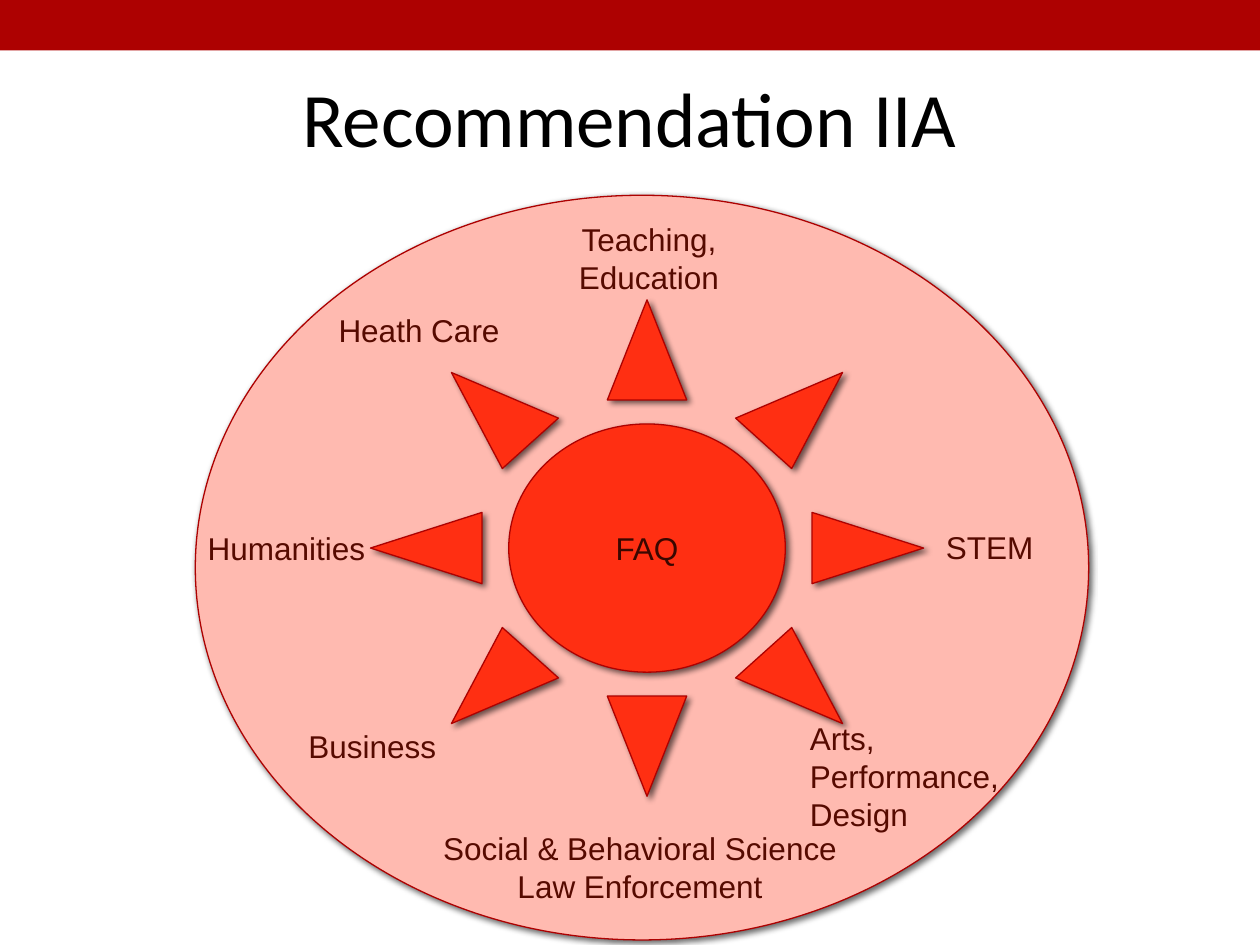
from typing import NamedTuple

from pptx import Presentation
from pptx.dml.color import RGBColor
from pptx.enum.shapes import MSO_SHAPE as SHAPE
from pptx.enum.text import MSO_ANCHOR as ANCHOR, MSO_AUTO_SIZE as AUTO_SIZE, PP_ALIGN as ALIGN
from pptx.oxml import parse_xml
from pptx.oxml.ns import nsdecls
from pptx.util import Inches, Pt

DARK_RED = RGBColor(0xAD, 0x01, 0x01)
PINK = RGBColor(0xFF, 0xBA, 0xB0)
BRIGHT_RED = RGBColor(0xFF, 0x2F, 0x12)
LABEL_BROWN = RGBColor(0x56, 0x0A, 0x00)
CORE_BROWN = RGBColor(0x3A, 0x07, 0x00)
BLACK = RGBColor(0, 0, 0)

SLIDE_W, SLIDE_H = 10, 7.5
LINE_H, INSETS_H = 0.305, 0.1


class Box(NamedTuple):
    """Left, top, width and height in inches."""
    left: float
    top: float
    width: float
    height: float

    def emu(self) -> list:
        return [Inches(v) for v in self]


class Label(NamedTuple):
    text: str
    left: float
    top: float
    width: float
    lines: int = 1
    align: ALIGN = ALIGN.LEFT
    wrap: bool = False


FIELD = Box(1.55, 1.55, 7.09, 5.91)
SUN = Box(2.94, 2.38, 4.39, 3.94)
LABELS = [
    Label("Teaching,\nEducation", 4.49, 1.7, 1.32, 2, ALIGN.CENTER),
    Label("Social & Behavioral Science\nLaw Enforcement", 3.4, 6.53, 3.36, 2, ALIGN.CENTER),
    Label("Business", 2.35, 5.72, 1.23),
    Label("STEM", 7.41, 4.14, 0.9),
    Label("Arts, Performance, Design", 6.33, 5.66, 1.75, 3, wrap=True),
    Label("Humanities", 1.55, 4.15, 1.46),
]


def set_text(tf, text: str, size: float, color: RGBColor, align: ALIGN, font: str = "Arial") -> None:
    tf.text = text
    for p in tf.paragraphs:
        p.alignment = align
        for r in p.runs:
            r.font.name = font
            r.font.size = Pt(size)
            r.font.color.rgb = color


def add_filled(s, kind: SHAPE, box: Box, fill: RGBColor):
    sp = s.shapes.add_shape(kind, *box.emu())
    sp.fill.solid()
    sp.fill.fore_color.rgb = fill
    sp.line.fill.background()
    sp.shadow.inherit = False
    return sp


def add_raised(s, kind: SHAPE, box: Box, fill: RGBColor):
    """Add a filled shape with a thin outline and a soft shadow."""
    sp = add_filled(s, kind, box, fill)
    sp.line.color.rgb = DARK_RED
    sp.line.width = Pt(0.75)
    effects = sp._element.spPr.find("{*}effectLst")
    effects.append(parse_xml(
        f'<a:outerShdw {nsdecls("a")} blurRad="{Pt(3)}" dist="{Pt(2)}" dir="2700000" rotWithShape="0">'
        '<a:srgbClr val="000000"><a:alpha val="60000"/></a:srgbClr></a:outerShdw>'))
    return sp


def add_label(s, label: Label) -> None:
    box = Box(label.left, label.top, label.width, label.lines * LINE_H + INSETS_H)
    tf = s.shapes.add_textbox(*box.emu()).text_frame
    set_text(tf, label.text, 18, LABEL_BROWN, label.align)
    tf.word_wrap = label.wrap
    tf.auto_size = AUTO_SIZE.SHAPE_TO_FIT_TEXT


def main() -> None:
    prs = Presentation()
    prs.slide_width, prs.slide_height = Inches(SLIDE_W), Inches(SLIDE_H)
    s = prs.slides.add_slide(prs.slide_layouts[5])

    title = s.shapes.title
    title.left, title.top, title.width, title.height = Box(0.5, 0.3, 9, 1.25).emu()
    title.text_frame.vertical_anchor = ANCHOR.MIDDLE
    set_text(title.text_frame, "Recommendation IIA", 44, BLACK, ALIGN.CENTER, "Calibri")

    add_filled(s, SHAPE.RECTANGLE, Box(0, 0, SLIDE_W, 0.4), DARK_RED)

    field = add_raised(s, SHAPE.OVAL, FIELD, PINK)
    field.text_frame.vertical_anchor = ANCHOR.TOP
    set_text(field.text_frame, "Heath Care", 18, LABEL_BROWN, ALIGN.LEFT)

    sun = add_raised(s, SHAPE.SUN, SUN, BRIGHT_RED)
    sun.text_frame.vertical_anchor = ANCHOR.MIDDLE
    set_text(sun.text_frame, "FAQ", 18, CORE_BROWN, ALIGN.CENTER)

    for label in LABELS:
        add_label(s, label)

    prs.save("out.pptx")


if __name__ == "__main__":
    main()
